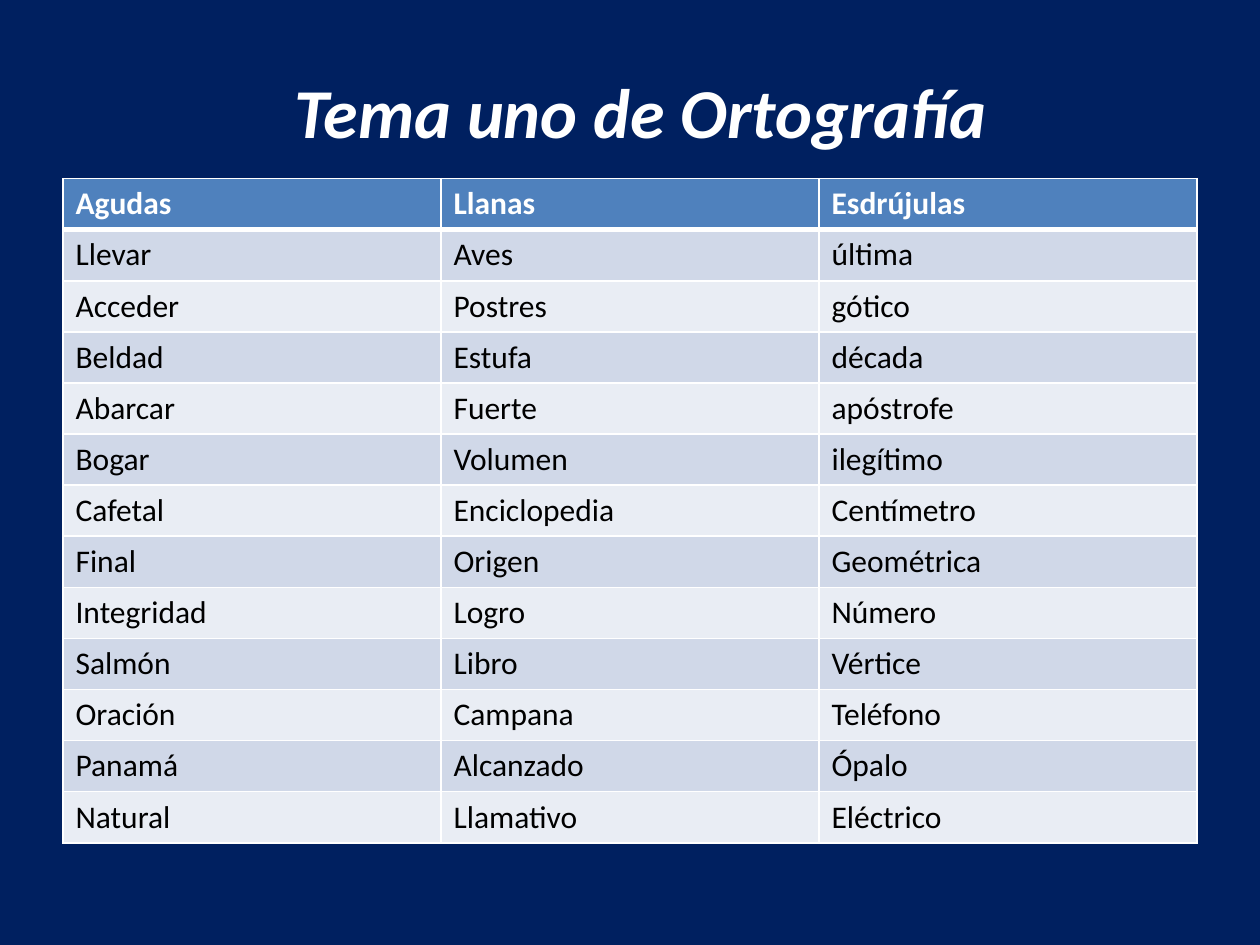
from dataclasses import dataclass

from lxml.etree import SubElement
from pptx import Presentation
from pptx.dml.color import RGBColor
from pptx.enum.text import MSO_ANCHOR, PP_ALIGN
from pptx.oxml.ns import qn
from pptx.util import Cm, Pt


@dataclass(frozen=True)
class Theme:
    font: str = "Calibri"
    background: str = "002060"
    light: str = "FFFFFF"
    dark: str = "000000"
    header: str = "4F81BD"
    bands: tuple = ("D0D8E8", "E9EDF4")
    title_size: int = 40
    table_size: int = 18
    border: int = 1
    header_rule: int = 3


THEME = Theme()

WORD_ROWS = [
    ("Agudas", "Llanas", "Esdrújulas"),
    ("Llevar", "Aves", "última"),
    ("Acceder", "Postres", "gótico"),
    ("Beldad", "Estufa", "década"),
    ("Abarcar", "Fuerte", "apóstrofe"),
    ("Bogar", "Volumen", "ilegítimo"),
    ("Cafetal", "Enciclopedia", "Centímetro"),
    ("Final", "Origen", "Geométrica"),
    ("Integridad", "Logro", "Número"),
    ("Salmón", "Libro", "Vértice"),
    ("Oración", "Campana", "Teléfono"),
    ("Panamá", "Alcanzado", "Ópalo"),
    ("Natural", "Llamativo", "Eléctrico"),
]


def rgb(value):
    return RGBColor.from_string(value)


def style_font(font, size, color, bold=False, italic=False):
    font.name = THEME.font
    font.size = Pt(size)
    font.color.rgb = rgb(color)
    font.bold = bold
    font.italic = italic


def set_borders(cell, top, bottom):
    """Draw the four cell edges; call before the fill is set."""
    properties = cell._tc.get_or_add_tcPr()
    widths = {"L": THEME.border, "R": THEME.border, "T": top, "B": bottom}
    for side, width in widths.items():
        edge = SubElement(properties, qn(f"a:ln{side}"), w=str(Pt(width)))
        fill = SubElement(edge, qn("a:solidFill"))
        SubElement(fill, qn("a:srgbClr"), val=THEME.light)


def place_title(slide, text, left, top, width, height):
    title = slide.shapes.title
    title.left, title.top, title.width, title.height = left, top, width, height
    title.text_frame.text = text
    title.text_frame.vertical_anchor = MSO_ANCHOR.MIDDLE
    heading = title.text_frame.paragraphs[0]
    heading.alignment = PP_ALIGN.CENTER
    style_font(heading.font, THEME.title_size, THEME.light, bold=True, italic=True)


def place_word_table(slide, rows, left, top, width, height):
    words = slide.shapes.add_table(
        len(rows), len(rows[0]), left, top, width, height
    ).table
    for r, row in enumerate(rows):
        is_header = r == 0
        fill = THEME.header if is_header else THEME.bands[(r - 1) % 2]
        color = THEME.light if is_header else THEME.dark
        # The heavy rule is shared by the header and the first word row
        above = THEME.header_rule if r == 1 else THEME.border
        below = THEME.header_rule if is_header else THEME.border
        for c, word in enumerate(row):
            cell = words.cell(r, c)
            cell.text = word
            set_borders(cell, above, below)
            cell.fill.solid()
            cell.fill.fore_color.rgb = rgb(fill)
            style_font(cell.text_frame.paragraphs[0].font,
                       THEME.table_size, color, bold=is_header)


def main():
    presentation = Presentation()
    presentation.slide_width, presentation.slide_height = Cm(25.4), Cm(19.05)
    slide = presentation.slides.add_slide(presentation.slide_layouts[5])
    slide.background.fill.solid()
    slide.background.fill.fore_color.rgb = rgb(THEME.background)

    # Heading
    place_title(slide, "Tema uno de Ortografía",
                Cm(1.48), Cm(1.27), Cm(22.86), Cm(1.9))
    # Words grouped by stress
    place_word_table(slide, WORD_ROWS, Cm(1.27), Cm(3.6), Cm(22.86), Cm(13.39))

    presentation.save("out.pptx")


if __name__ == "__main__":
    main()
